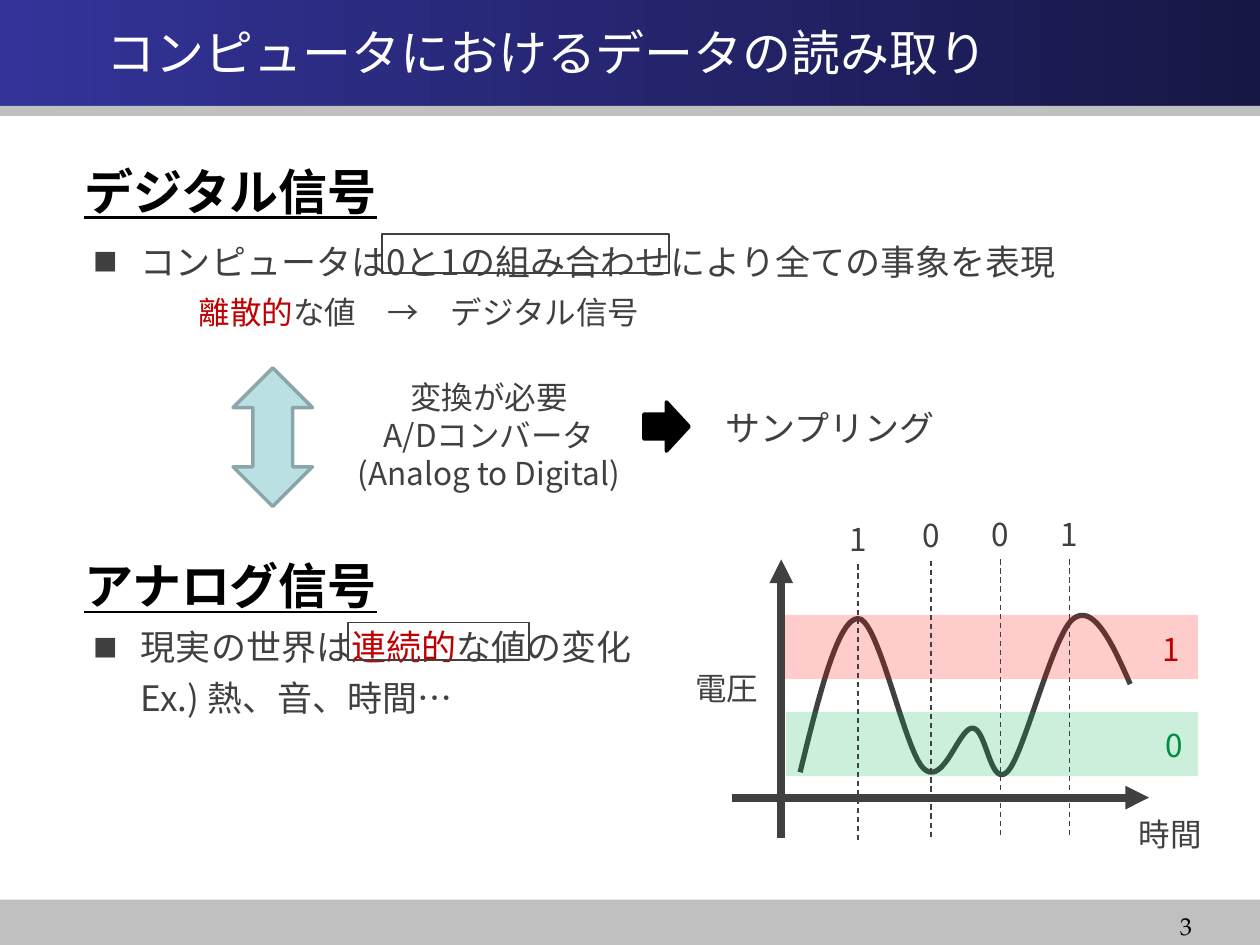
"""Build a slide comparing digital and analog signals, with a sampling diagram."""
from pptx import Presentation
from pptx.dml.color import RGBColor
from pptx.enum.dml import MSO_LINE
from pptx.enum.shapes import MSO_CONNECTOR, MSO_SHAPE
from pptx.enum.text import MSO_ANCHOR, PP_ALIGN
from pptx.oxml.ns import qn
from pptx.util import Inches, Pt
from lxml import etree

RECT, STRAIGHT = MSO_SHAPE.RECTANGLE, MSO_CONNECTOR.STRAIGHT
UP_DOWN, RIGHT_ARROW = MSO_SHAPE.UP_DOWN_ARROW, MSO_SHAPE.RIGHT_ARROW
DASH = MSO_LINE.DASH
LEFT, CENTER, RIGHT = PP_ALIGN.LEFT, PP_ALIGN.CENTER, PP_ALIGN.RIGHT
TOP, MIDDLE = MSO_ANCHOR.TOP, MSO_ANCHOR.MIDDLE

THEME = {
    "font": "Noto Sans CJK JP", "title_font": "TeX Gyre Adventor", "number_font": "TeX Gyre Pagella",
    "ink": "404040", "black": "000000", "white": "FFFFFF", "gray": "C0C0C0",
    "navy": "333399", "navy_dark": "171746", "red": "C00000", "green": "008E40",
    "high": "FF0000", "low": "00B050", "arrow": "BBE0E3", "arrow_edge": "8AA6A8",
    "heading": 28, "body": 20, "label": 18, "number": 14,
}

prs = Presentation()
prs.slide_width, prs.slide_height = Inches(10), Inches(7.5)
s = prs.slides.add_slide(prs.slide_layouts[6])


def add_text(x, y, w, h, parts, size="label", font="font", align=LEFT, anchor=TOP,
             heading=False, bullet=False, spaced=False):
    """Add a text box whose parts are (text, colour name) pairs."""
    tf = s.shapes.add_textbox(Inches(x), Inches(y), Inches(w), Inches(h)).text_frame
    tf.word_wrap, tf.vertical_anchor = True, anchor
    p = tf.paragraphs[0]
    p.alignment = align
    if spaced or bullet:
        p.line_spacing, p.space_after = 1.2, Pt(6)
    if bullet:
        pPr = p._p.get_or_add_pPr()
        pPr.set("marL", str(Inches(0.38)))
        pPr.set("indent", str(-Inches(0.38)))
        etree.SubElement(pPr, qn("a:buSzPct")).set("val", "70000")
        etree.SubElement(pPr, qn("a:buFont")).set("typeface", THEME["font"])
        etree.SubElement(pPr, qn("a:buChar")).set("char", "■")
    for text, color in parts:
        for i, line in enumerate(text.split("\n")):
            if i:
                p.add_line_break()
            r = p.add_run()
            r.text = line
            r.font.size, r.font.name = Pt(THEME[size]), THEME[font]
            r.font.color.rgb = RGBColor.from_string(THEME[color])
            if heading:
                r.font.bold = r.font.underline = True
            etree.SubElement(r._r.get_or_add_rPr(), qn("a:ea")).set("typeface", THEME["font"])


def add_shape(kind, x, y, w, h, fill=None, line=None, width=1, alpha=None):
    """Add a preset shape with optional fill, outline and opacity percentage."""
    sp = s.shapes.add_shape(kind, Inches(x), Inches(y), Inches(w), Inches(h))
    sp.shadow.inherit = False
    if fill:
        sp.fill.solid()
        sp.fill.fore_color.rgb = RGBColor.from_string(THEME[fill])
    else:
        sp.fill.background()
    if line:
        sp.line.color.rgb = RGBColor.from_string(THEME[line])
        sp.line.width = Pt(width)
    else:
        sp.line.fill.background()
    if alpha:
        clr = sp._element.spPr.find(qn("a:solidFill"))[0]
        etree.SubElement(clr, qn("a:alpha")).set("val", str(alpha * 1000))
    return sp


add_shape(RECT, 0, 7.14, 10, 0.36, "gray")
banner = add_shape(RECT, 0, 0, 10, 0.84, "navy")
banner.fill.gradient()
banner.fill.gradient_angle = 0
for stop, color in zip(banner.fill.gradient_stops, ("navy", "navy_dark")):
    stop.color.rgb = RGBColor.from_string(THEME[color])
add_shape(RECT, 0, 0.84, 10, 0.08, "gray")
add_text(0.36, 0.14, 8.12, 0.54, [("\u3000コンピュータにおけるデータの読み取り".replace("\u3000", "　"), "white")],
         "heading", "title_font", anchor=MIDDLE)
add_text(7.23, 7.24, 2.33, 0.22, [("3", "black")], "number", "number_font", RIGHT, MIDDLE)

for y, heading in ((1.23, "デジタル信号"), (4.36, "アナログ信号")):
    add_text(0.57, y, 8.27, 0.57, [(heading, "black")], "heading", heading=True)
add_text(0.64, 1.79, 8.85, 0.91, [("コンピュータは0と1の組み合わせにより全ての事象を表現", "ink")],
         "body", bullet=True)
add_text(1.48, 2.22, 3.74, 0.46, [("離散的", "red"), ("な値　→　デジタル信号", "ink")], spaced=True)
add_text(0.64, 4.85, 8.85, 0.91,
         [("現実の世界は", "ink"), ("連続的", "red"), ("な値の変化\nEx.) 熱、音、時間…", "ink")],
         "body", bullet=True)
add_shape(RECT, 3.03, 1.86, 2.28, 0.31, line="ink")
add_shape(RECT, 2.76, 4.94, 1.44, 0.3, line="ink")

add_shape(UP_DOWN, 1.85, 2.92, 0.63, 1.1, "arrow", "arrow_edge", 2)
add_text(2.72, 2.95, 2.32, 1.01, [("変換が必要\nA/Dコンバータ\n(Analog to Digital)", "ink")], align=CENTER)
add_shape(RIGHT_ARROW, 5.11, 3.19, 0.36, 0.39, "black", "black", 2)
add_text(5.66, 3.18, 2.14, 0.44, [("サンプリング", "ink")], "body")

wave_start = (6.35, 6.13)
wave_curves = [
    ((6.5, 5.52), (6.65, 4.91), (6.81, 4.91)),
    ((6.97, 4.9), (7.18, 5.96), (7.33, 6.1)),
    ((7.49, 6.25), (7.61, 5.77), (7.72, 5.78)),
    ((7.83, 5.78), (7.86, 6.27), (8, 6.12)),
    ((8.13, 5.98), (8.36, 5.02), (8.52, 4.91)),
    ((8.68, 4.79), (8.83, 5.11), (8.97, 5.43)),
]
steps = 20
points = []
a = wave_start
for b, c, d in wave_curves:
    for t in (i / steps for i in range(1, steps + 1)):
        weights = ((1 - t) ** 3, 3 * t * (1 - t) ** 2, 3 * t ** 2 * (1 - t), t ** 3)
        points.append([Inches(sum(k * q[axis] for k, q in zip(weights, (a, b, c, d)))) for axis in (0, 1)])
    a = d
builder = s.shapes.build_freeform(Inches(wave_start[0]), Inches(wave_start[1]))
builder.add_line_segments(points, close=False)
wave = builder.convert_to_shape()
wave.shadow.inherit = False
wave.fill.background()
wave.line.color.rgb = RGBColor.from_string(THEME["ink"])
wave.line.width = Pt(3)

add_shape(RECT, 6.2, 4.88, 3.31, 0.51, "high", alpha=20)
add_shape(RECT, 6.24, 5.65, 3.27, 0.51, "low", alpha=20)

samples = [(6.81, 4.48, "1"), (7.39, 4.45, "0"), (7.94, 4.44, "0"), (8.49, 4.44, "1")]
axes = [(6.2, 6.65, 6.2, 4.44, True), (5.81, 6.33, 9.12, 6.33, True)]
for x1, y1, x2, y2, is_axis in axes + [(x, y, x, y + 2.2, False) for x, y, bit in samples]:
    cn = s.shapes.add_connector(STRAIGHT, Inches(x1), Inches(y1), Inches(x2), Inches(y2))
    cn.line.color.rgb = RGBColor.from_string(THEME["ink"])
    cn.line.width = Pt(4.5 if is_axis else 0.75)
    if is_axis:
        etree.SubElement(cn.line._get_or_add_ln(), qn("a:tailEnd")).set("type", "triangle")
    else:
        cn.line.dash_style = DASH
    etree.SubElement(cn._element.spPr, qn("a:effectLst"))

for x, y, bit in samples:
    add_text(x - 0.17, y - 0.4, 0.34, 0.4, [(bit, "ink")])
for x, y, w, label, color in (
    (8.94, 6.42, 0.75, "時間", "ink"), (5.42, 5.26, 0.75, "電圧", "ink"),
    (9.13, 4.95, 0.34, "1", "red"), (9.15, 5.71, 0.34, "0", "green"),
):
    add_text(x, y, w, 0.4, [(label, color)])

prs.save("out.pptx")
